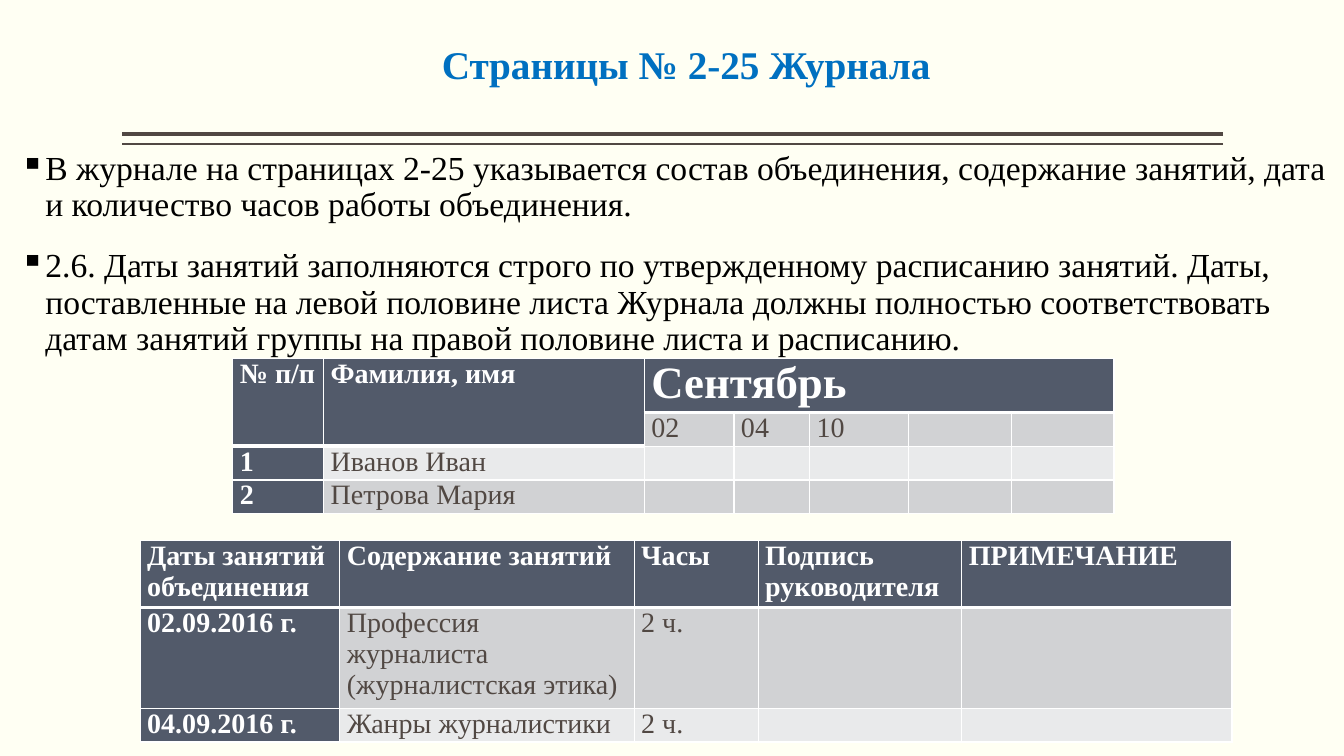
from lxml.etree import SubElement
from pptx import Presentation
from pptx.dml.color import RGBColor
from pptx.enum.shapes import MSO_CONNECTOR as CONNECTOR
from pptx.enum.text import MSO_ANCHOR as ANCHOR, PP_ALIGN as ALIGN
from pptx.oxml.ns import qn
from pptx.util import Inches, Pt

FONT = "Times New Roman"
PAPER, INK, HEAD, WHITE = "FFFFF3", "514843", "525A6A", "FFFFFF"
BANDS = ["D1D2D4", "E9EAEB"]


def rgb(code):
    """Turn a hex string into a colour."""
    return RGBColor.from_string(code)


def style(paragraph, size, color, bold=False, align=ALIGN.LEFT):
    """Set the font and alignment of a paragraph."""
    font = paragraph.font
    font.name, font.size, font.bold = FONT, Pt(size), bold
    font.color.rgb = rgb(color)
    paragraph.alignment = align


def add_frame(slide, box, anchor):
    """Add a wrapping text box without side margins and return its frame."""
    frame = slide.shapes.add_textbox(*map(Inches, box)).text_frame
    frame.word_wrap = True
    frame.margin_left = frame.margin_right = 0
    frame.vertical_anchor = anchor
    return frame


def add_title(slide, box, title):
    """Place the heading at the bottom of its box."""
    heading = add_frame(slide, box, ANCHOR.BOTTOM).paragraphs[0]
    heading.text = title
    heading.line_spacing = 0.9
    style(heading, 28, "0070C0", True, ALIGN.CENTER)


def add_double_rule(slide, box):
    """Draw a thick rule on the top edge of the box and a thin one on the bottom."""
    left, top, width, height = box
    for y, weight in ((top, 3), (top + height, 1)):
        rule = slide.shapes.add_connector(
            CONNECTOR.STRAIGHT, *map(Inches, (left + width, y, left, y)))
        rule.line.color.rgb = rgb(INK)
        rule.line.width = Pt(weight)
        SubElement(rule._element.spPr, qn("a:effectLst"))


def add_rules_text(slide, box, rules):
    """Write the bulleted rules."""
    frame = add_frame(slide, box, ANCHOR.TOP)
    for index, rule in enumerate(rules):
        paragraph = frame.add_paragraph() if index else frame.paragraphs[0]
        paragraph.text = rule
        paragraph.line_spacing = 0.9
        paragraph.space_before = Pt(18)
        style(paragraph, 24, "000000")
        props = paragraph._p.get_or_add_pPr()
        props.set("marL", str(Inches(0.25)))
        props.set("indent", str(-Inches(0.25)))
        bullet = SubElement(props, qn("a:buChar"), char="▪")
        props.find(qn("a:defRPr")).addprevious(bullet)


def add_borders(cell, bottom):
    """Outline a cell in white, with its own bottom weight."""
    props = cell._tc.get_or_add_tcPr()
    for index, side in enumerate("LRTB"):
        weight = bottom if side == "B" else 1
        line = SubElement(props, qn(f"a:ln{side}"), w=str(Pt(weight)))
        fill = SubElement(line, qn("a:solidFill"))
        SubElement(fill, qn("a:srgbClr"), val=WHITE)
        props.insert(index, line)


def add_journal_table(slide, corner, columns, heights, rows, align, merges=(), big=()):
    """Build a journal page with a dark header row, dark row labels and banded rows."""
    box = (*corner, sum(columns), sum(heights))
    table = slide.shapes.add_table(
        len(rows), len(columns), *map(Inches, box)).table
    table.first_row = table.horz_banding = False
    for column, width in zip(table.columns, columns):
        column.width = Inches(width)
    for row, height in zip(table.rows, heights):
        row.height = Inches(height)
    merged = {(r, c) for top, left, bottom, right in merges
              for r in range(top, bottom + 1) for c in range(left, right + 1)}
    for r, texts in enumerate(rows):
        for c in range(len(columns)):
            cell = table.cell(r, c)
            dark = r == 0 or c == 0 or (r, c) in merged
            cell.margin_left = cell.margin_right = Inches(0.07)
            cell.margin_top = cell.margin_bottom = 0
            cell.text = texts[c] if c < len(texts) else ""
            style(cell.text_frame.paragraphs[0], 32 if (r, c) in big else 20,
                  WHITE if dark else INK, dark, align)
            cell.fill.solid()
            cell.fill.fore_color.rgb = rgb(HEAD if dark else BANDS[(r - 1) % 2])
            add_borders(cell, 3 if r == 0 or (r, c) in merged else 1)
    for top, left, bottom, right in merges:
        table.cell(top, left).merge(table.cell(bottom, right))


def build_journal_slide(deck):
    """Compose the slide about the journal pages."""
    slide = deck.slides.add_slide(deck.slide_layouts[6])
    slide.background.fill.solid()
    slide.background.fill.fore_color.rgb = rgb(PAPER)
    add_double_rule(slide, (1.21, 1.33, 10.92, 0.1))
    add_title(slide, (0.72, 0.18, 12.17, 0.74), "Страницы № 2-25 Журнала")
    add_rules_text(slide, (0.2, 1.45, 12.97, 6.29), [
        "В журнале на страницах 2-25 указывается состав объединения, "
        "содержание занятий, дата и количество часов работы объединения.",
        "2.6. Даты занятий заполняются строго по утвержденному расписанию "
        "занятий. Даты, поставленные на левой половине листа Журнала должны "
        "полностью соответствовать датам занятий группы на правой половине "
        "листа и расписанию.",
    ])
    add_journal_table(
        slide, (2.31, 3.56), [0.9, 3.18, 0.89, 0.75, 0.98, 1.02, 1.02],
        [0.49, 0.31, 0.31, 0.31],
        [["№ п/п", "Фамилия, имя", "Сентябрь"],
         ["", "", "02", "04", "10"],
         ["1", "Иванов Иван"],
         ["2", "Петрова Мария"]],
        ALIGN.JUSTIFY,
        merges=[(0, 0, 1, 0), (0, 1, 1, 1), (0, 2, 0, 6)], big=[(0, 2)])
    add_journal_table(
        slide, (1.39, 5.36), [1.98, 2.92, 1.23, 2.02, 2.68],
        [0.61, 0.92, 0.31],
        [["Даты занятий объединения", "Содержание занятий", "Часы",
          "Подпись руководителя", "ПРИМЕЧАНИЕ"],
         ["02.09.2016 г.", "Профессия журналиста (журналистская этика)", "2 ч."],
         ["04.09.2016 г.", "Жанры журналистики", "2 ч."]],
        ALIGN.LEFT)


def main():
    """Create and save the deck."""
    deck = Presentation()
    deck.slide_width, deck.slide_height = Inches(13.33), Inches(7.5)
    build_journal_slide(deck)
    deck.save("out.pptx")


if __name__ == "__main__":
    main()
